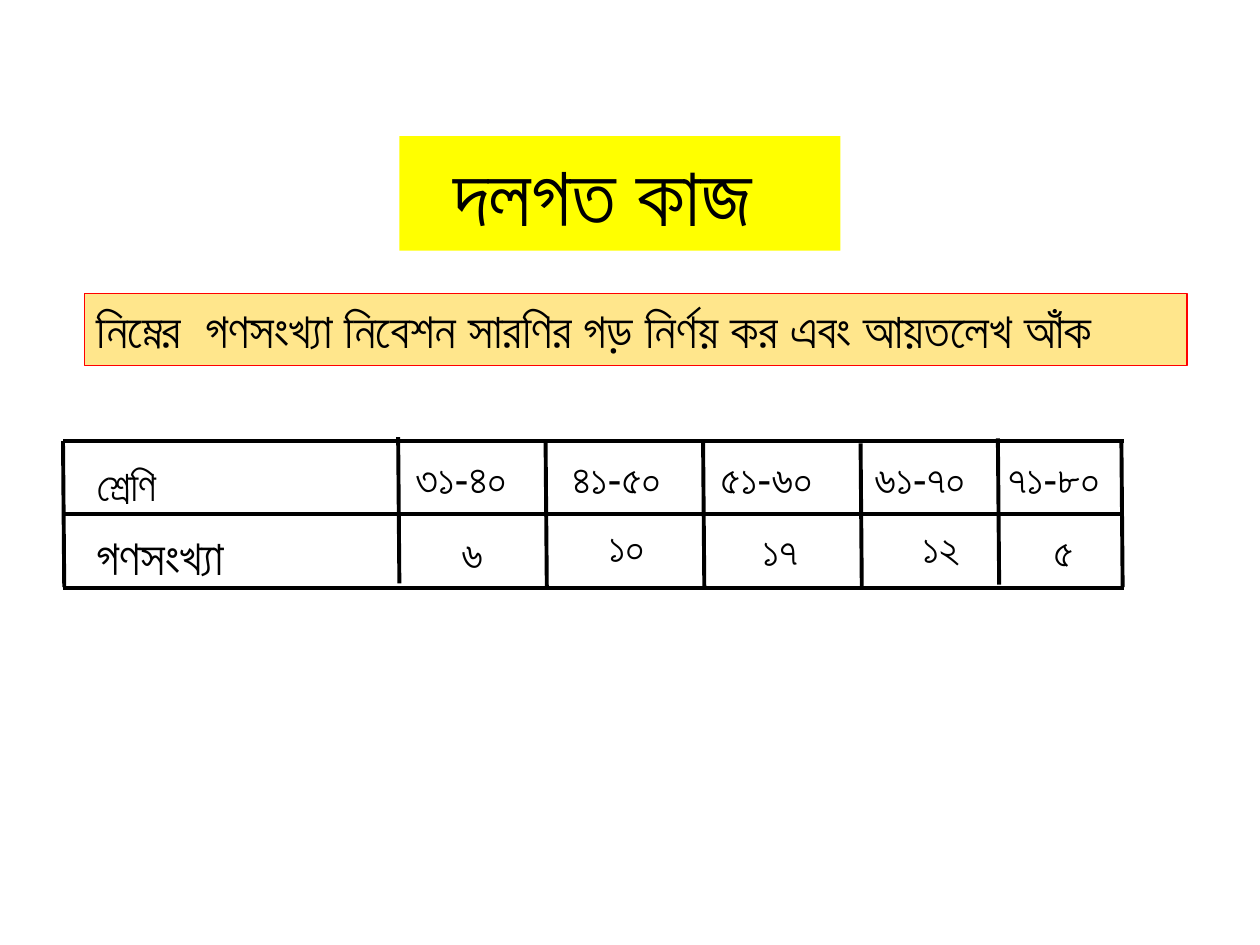
from dataclasses import dataclass

from lxml import etree
from pptx import Presentation
from pptx.dml.color import RGBColor
from pptx.enum.shapes import MSO_CONNECTOR as Connector, MSO_SHAPE as Shape
from pptx.enum.text import MSO_ANCHOR as Anchor, PP_ALIGN as Align
from pptx.oxml.ns import qn
from pptx.util import Inches, Pt


@dataclass(frozen=True)
class Theme:
    font: str = "Arial"
    ink: str = "000000"
    title_fill: str = "FFFF00"
    task_fill: str = "FFE68C"
    task_line: str = "FF0000"
    title_size: int = 48
    large_size: int = 28
    body_size: int = 24
    rule: float = 2.25


theme = Theme()


def write(shape, text, size, indent=0.1):
    """Put one left-aligned line of text in a shape or text box."""
    frame = shape.text_frame
    formats = {"word_wrap": True, "vertical_anchor": Anchor.TOP,
               "margin_left": Inches(indent)}
    for name, value in formats.items():
        setattr(frame, name, value)
    paragraph = frame.paragraphs[0]
    paragraph.text = text
    paragraph.alignment = Align.LEFT
    for name, value in {"name": theme.font, "size": Pt(size)}.items():
        setattr(paragraph.font, name, value)
    paragraph.font.color.rgb = RGBColor.from_string(theme.ink)


presentation = Presentation()
presentation.slide_width = Inches(10)
presentation.slide_height = Inches(7.5)
slide = presentation.slides.add_slide(presentation.slide_layouts[6])

# Title and task banners
banners = [
    ("দলগত কাজ", (3.17, 1.08, 3.5, 0.91), theme.title_size, 0.43,
     theme.title_fill, None),
    ("নিম্নের  গণসংখ্যা নিবেশন সারণির গড় নির্ণয় কর এবং আয়তলেখ আঁক",
     (0.67, 2.33, 8.75, 0.57), theme.large_size, 0.1,
     theme.task_fill, theme.task_line),
]
for text, place, size, indent, fill, line in banners:
    shape = slide.shapes.add_shape(Shape.RECTANGLE, *map(Inches, place))
    shape.shadow.inherit = False
    shape.fill.solid()
    shape.fill.fore_color.rgb = RGBColor.from_string(fill)
    if line:
        shape.line.color.rgb = RGBColor.from_string(line)
        shape.line.width = Pt(0.75)
    else:
        shape.line.fill.background()
    write(shape, text, size, indent)

# Ruled grid: level row rules, and column rules that lean slightly
row_rules = [(0.5, y, 8.92, y) for y in (3.5, 4.08, 4.67)]
column_tops = [(0.5, 3.5), (7.92, 3.48), (3.16, 3.47), (4.33, 3.5),
               (5.58, 3.5), (6.83, 3.52), (8.9, 3.5)]
column_rules = [(x + 0.01, y + 1.16, x, y) for x, y in column_tops]
grid = slide.shapes.add_group_shape()
for ends in row_rules + column_rules:
    rule = grid.shapes.add_connector(Connector.STRAIGHT, *map(Inches, ends))
    rule.line.color.rgb = RGBColor.from_string(theme.ink)
    rule.line.width = Pt(theme.rule)
    etree.SubElement(rule._element.spPr, qn("a:effectLst"))

# Row labels
labels = [("গণসংখ্যা", 4.13, 0.57, theme.large_size),
          ("শ্রেণি", 3.6, 0.5, theme.body_size)]
for text, top, height, size in labels:
    box = slide.shapes.add_textbox(
        Inches(0.67), Inches(top), Inches(2.25), Inches(height))
    write(box, text, size)

# Class intervals, then their frequencies: text, left, top
intervals = [("৩১-৪০", 3.2, 3.54), ("৪১-৫০", 4.44, 3.54),
             ("৫১-৬০", 5.62, 3.54), ("৬১-৭০", 6.84, 3.54),
             ("৭১-৮০", 7.9, 3.54)]
frequencies = [("৬", 3.23, 4.14), ("১০", 4.4, 4.08), ("১৭", 5.62, 4.11),
               ("১২", 6.89, 4.09), ("৫", 7.93, 4.12)]
for entries, indent in ((intervals, 0.1), (frequencies, 0.43)):
    for text, left, top in entries:
        box = slide.shapes.add_textbox(
            Inches(left), Inches(top), Inches(1.04), Inches(0.5))
        write(box, text, theme.body_size, indent)

presentation.save("out.pptx")
